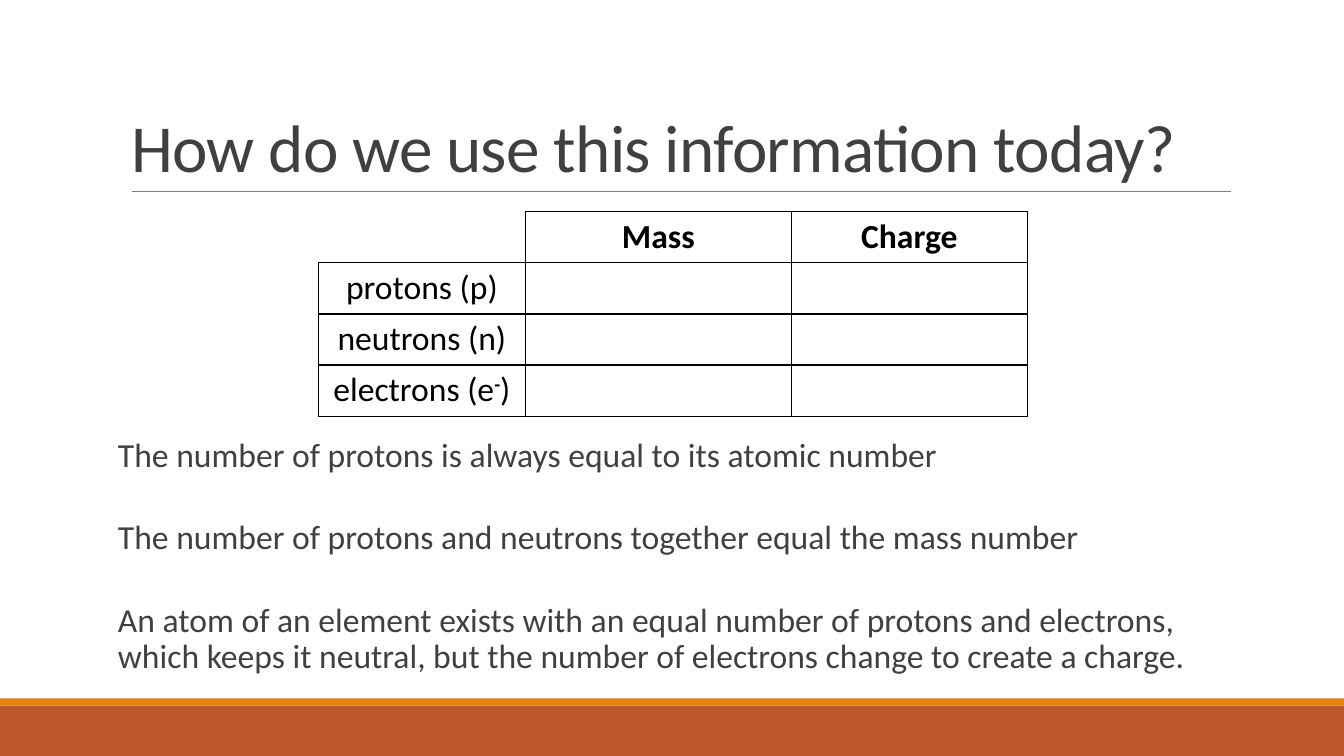
from lxml import etree
from pptx import Presentation
from pptx.dml.color import RGBColor
from pptx.enum import shapes, text
from pptx.oxml import ns
from pptx.util import Inches, Pt

BLACK = RGBColor(0x00, 0x00, 0x00)
DARK_GREY = RGBColor(0x40, 0x40, 0x40)
RULE_GREY = RGBColor(0x80, 0x80, 0x80)
ORANGE = RGBColor(0xE4, 0x83, 0x12)
RUST = RGBColor(0xBD, 0x58, 0x2C)

COLUMN_WIDTHS = (2.05, 2.64, 2.34)
ROW_HEIGHT = 0.49
PARTICLES = [
    ["", "Mass", "Charge"],
    ["protons (p)", "", ""],
    ["neutrons (n)", "", ""],
    ["electrons (e", "", ""],
]
FACTS = [
    "The number of protons is always equal to its atomic number",
    "The number of protons and neutrons together equal the mass number",
    "An atom of an element exists with an equal number of protons and electrons, "
    "which keeps it neutral, but the number of electrons change to create a charge.",
]


def add_text(paragraph, content, size=24, color=BLACK, bold=False, font="Calibri", **attributes):
    """Add a run; extra keywords become run attributes such as spc or baseline."""
    run = paragraph.add_run()
    run.text = content
    run.font.name = font
    run.font.size = Pt(size)
    run.font.bold = bold
    run.font.color.rgb = color
    for name, value in attributes.items():
        run._r.get_or_add_rPr().set(name, str(value))


def set_borders(cell, sides):
    """Draw black borders on the given sides (of L, R, T, B) and none on the others."""
    properties = cell._tc.get_or_add_tcPr()
    for side in "LRTB":
        line = etree.SubElement(properties, ns.qn(f"a:ln{side}"), w=str(Pt(1)))
        if side in sides:
            fill = etree.SubElement(line, ns.qn("a:solidFill"))
            etree.SubElement(fill, ns.qn("a:srgbClr"), val=str(BLACK))
        else:
            etree.SubElement(line, ns.qn("a:noFill"))


class SlideBuilder:
    def __init__(self, presentation):
        self.slide = presentation.slides.add_slide(presentation.slide_layouts[1])
        self.text_color = DARK_GREY

    def bar(self, top, height, color):
        shape = self.slide.shapes.add_shape(
            shapes.MSO_SHAPE.RECTANGLE, 0, Inches(top), Inches(13.33), Inches(height))
        shape.shadow.inherit = False
        shape.fill.solid()
        shape.fill.fore_color.rgb = color
        shape.line.fill.background()

    def rule(self, left, right, top):
        line = self.slide.shapes.add_connector(
            shapes.MSO_CONNECTOR.STRAIGHT, Inches(left), Inches(top), Inches(right), Inches(top))
        line.line.color.rgb = RULE_GREY
        line.line.width = Pt(0.5)
        etree.SubElement(line._element.spPr, ns.qn("a:effectLst"))

    def place(self, placeholder, left, top, width, height, anchor):
        placeholder.left, placeholder.top = Inches(left), Inches(top)
        placeholder.width, placeholder.height = Inches(width), Inches(height)
        frame = placeholder.text_frame
        frame.word_wrap = True
        frame.auto_size = text.MSO_AUTO_SIZE.NONE
        frame.vertical_anchor = anchor
        return frame

    def title(self, content):
        frame = self.place(self.slide.shapes.title, 1.2, 0.31, 11, 1.59, text.MSO_ANCHOR.BOTTOM)
        paragraph = frame.paragraphs[0]
        paragraph.alignment = text.PP_ALIGN.LEFT
        paragraph.line_spacing = 0.85
        add_text(paragraph, content, size=48, color=self.text_color, spc=-50)

    def body(self, facts):
        frame = self.place(self.slide.placeholders[1], 1.17, 4.3, 11, 2.6, text.MSO_ANCHOR.TOP)
        frame.margin_left = frame.margin_right = 0
        for index, fact in enumerate(facts):
            paragraph = frame.add_paragraph() if index else frame.paragraphs[0]
            paragraph.line_spacing = 0.9
            paragraph.space_before = Pt(0)
            paragraph.space_after = Pt(33)
            properties = paragraph._p.get_or_add_pPr()
            properties.set("marL", "0")
            properties.set("indent", "0")
            etree.SubElement(properties, ns.qn("a:buNone"))
            add_text(paragraph, fact, color=self.text_color)

    def table(self, left, top, rows, widths):
        table = self.slide.shapes.add_table(
            len(rows), len(widths), Inches(left), Inches(top),
            Inches(sum(widths)), Inches(ROW_HEIGHT * len(rows))).table
        table.first_row = table.horz_banding = False
        for column, width in zip(table.columns, widths):
            column.width = Inches(width)
        for row_index, row in enumerate(rows):
            table.rows[row_index].height = Inches(ROW_HEIGHT)
            for column_index, content in enumerate(row):
                cell = table.cell(row_index, column_index)
                set_borders(cell, "LRTB" if row_index or column_index else "RB")
                cell.fill.background()
                paragraph = cell.text_frame.paragraphs[0]
                paragraph.alignment = text.PP_ALIGN.CENTER
                if content:
                    add_text(paragraph, content, bold=row_index == 0)
        return table


def main():
    presentation = Presentation()
    presentation.slide_width = Inches(13.33)
    presentation.slide_height = Inches(7.5)

    builder = SlideBuilder(presentation)
    builder.bar(7, 0.5, RUST)
    builder.bar(6.93, 0.07, ORANGE)
    builder.rule(1.31, 12.21, 1.9)
    builder.title("How do we use this information today?")
    builder.body(FACTS)

    table = builder.table(3.16, 2.1, PARTICLES, COLUMN_WIDTHS)
    electrons = table.cell(3, 0).text_frame.paragraphs[0]
    add_text(electrons, "-", bold=True, baseline=30000)
    add_text(electrons, ")")

    presentation.save("out.pptx")


if __name__ == "__main__":
    main()
